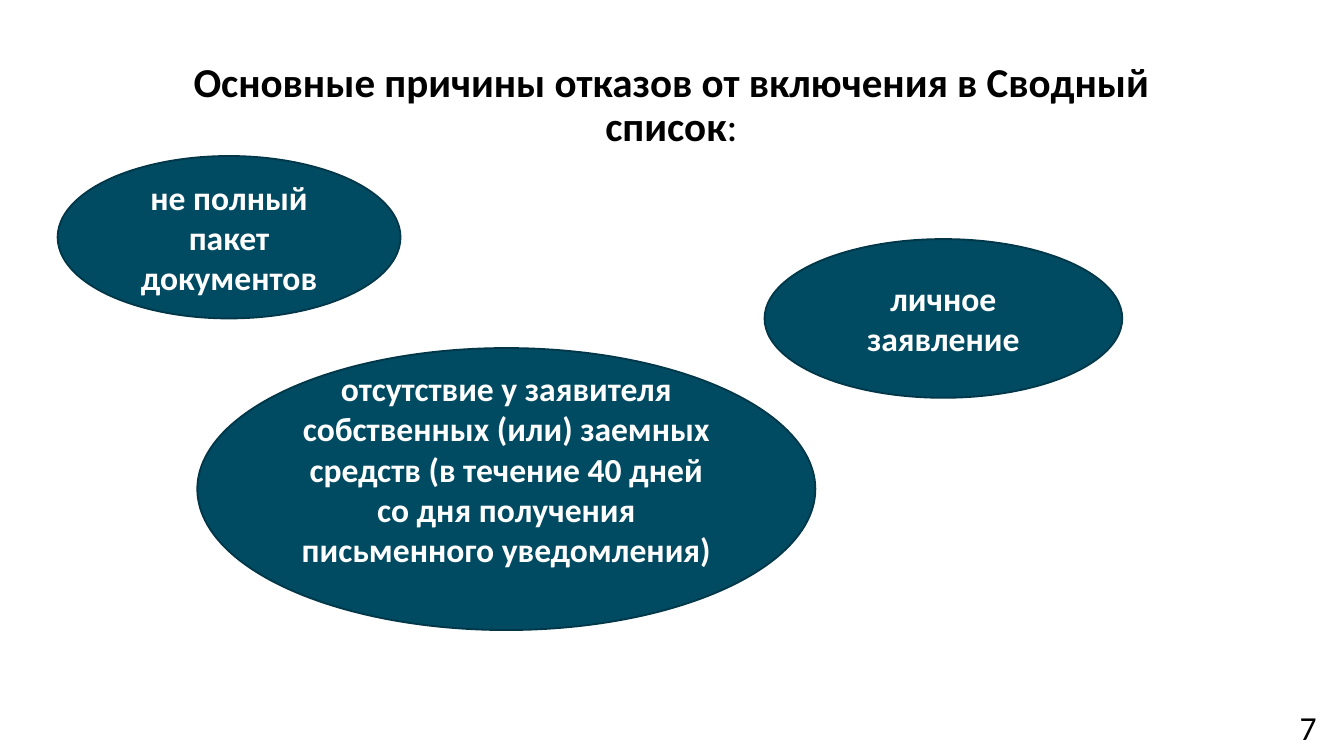
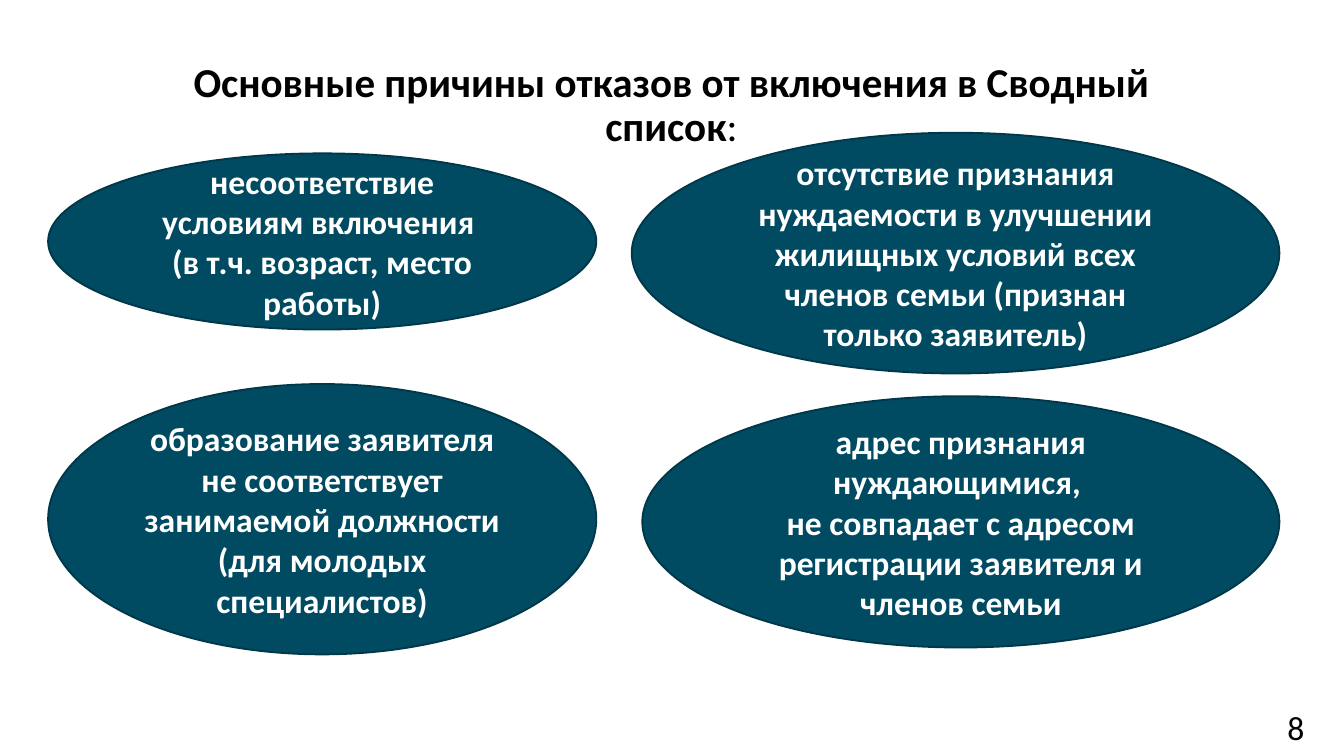
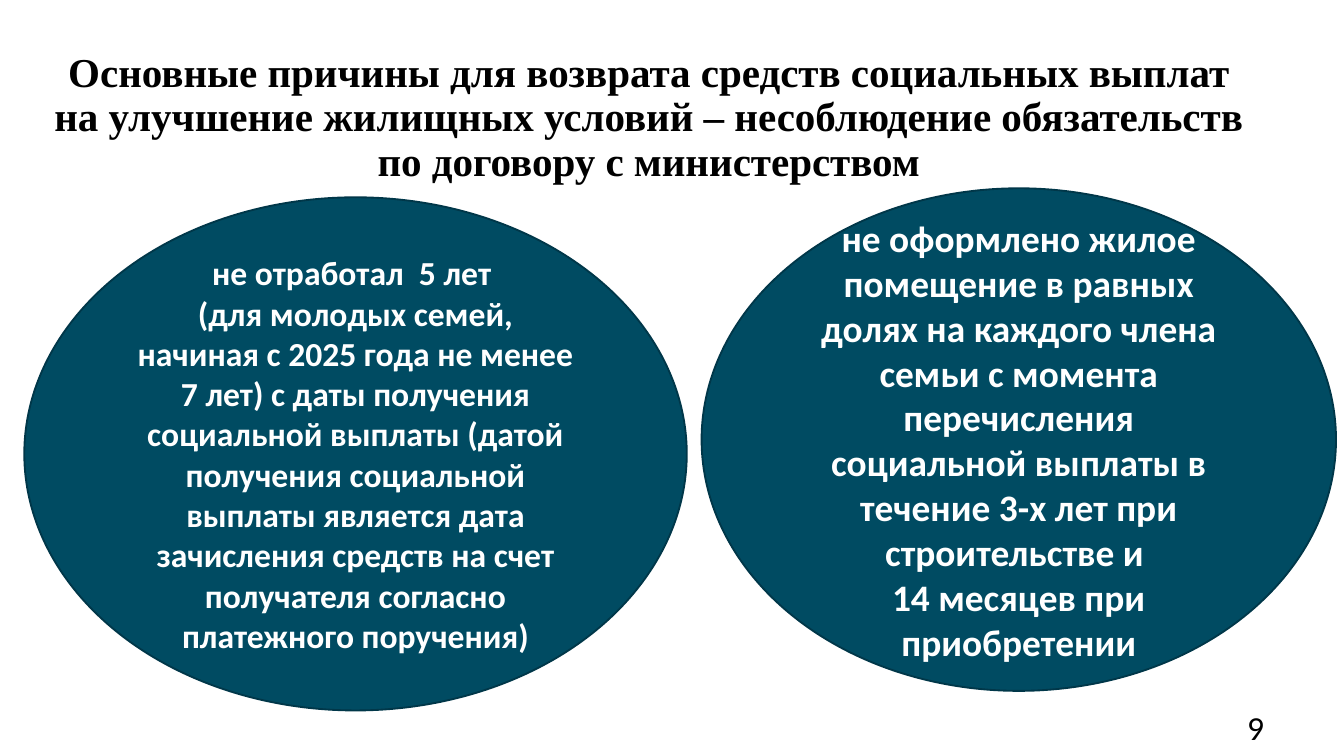
from pptx import Presentation
from pptx.dml.color import RGBColor
from pptx.enum import shapes, text
from pptx.util import Cm, Pt

COLOURS = {"oval": "004B62", "outline": "003749", "light": "FFFFFF", "dark": "000000"}
FONT = "Calibri"
TITLE_ONLY = 5
FIRST_NUMBER = 7
CENTER, RIGHT = text.PP_ALIGN.CENTER, text.PP_ALIGN.RIGHT

REFUSAL = dict(parts=["Основные причины отказов от включения в Сводный список", ":"],
               box=(2.57, 1.04, 20.24, 1.47))
REPAYMENT = dict(parts=["Основные причины для возврата средств социальных выплат на улучшение "
                        "жилищных условий – несоблюдение обязательств по договору с министерством"],
                 box=(0.64, 0.86, 23.24, 3.61), font="Times New Roman")

# Each reason: its box in cm, its paragraphs, then any special formatting
SLIDES = [
    dict(title=REFUSAL, number_left=24.31, number_align=RIGHT, reasons=[
        dict(box=(14.45, 4.52, 6.76, 3), lines=["личное заявление"]),
        dict(box=(3.73, 6.58, 11.68, 5.33), bottom=0.89, lines=[
            "отсутствие у заявителя собственных (или) заемных средств "
            "(в течение 40 дней со дня получения письменного уведомления)"]),
        dict(box=(1.09, 2.95, 6.48, 3.07), lines=["не полный пакет документов"]),
    ]),
    dict(title=REFUSAL, number_left=24.08, reasons=[
        dict(box=(0.91, 2.9, 10.36, 3.33), lines=[
            "несоответствие условиям включения ", "(в т.ч. возраст, место работы)"]),
        dict(box=(11.94, 2.51, 12.24, 4.55), lines=[
            "отсутствие признания нуждаемости в улучшении жилищных условий "
            "всех членов семьи (признан только заявитель)"]),
        dict(box=(0.91, 7.26, 10.36, 5.11), lines=[
            "образование заявителя не соответствует занимаемой должности ",
            "(для молодых специалистов)"]),
        dict(box=(12.14, 7.49, 12.04, 4.75), lines=[
            "адрес признания нуждающимися, ",
            "не совпадает с адресом регистрации заявителя и членов семьи"]),
    ]),
    dict(title=REPAYMENT, number_left=23.32, reasons=[
        dict(box=(0.46, 3.73, 12.52, 9.7), lines=[
            "не отработал  5 лет \v(для молодых семей, начиная с 2025 года не менее 7 лет) "
            "с даты получения социальной выплаты (датой получения социальной выплаты "
            "является дата зачисления средств на счет получателя согласно "
            "платежного поручения)"]),
        dict(box=(13.26, 3.56, 11.99, 9.5), size=20, lines=[
            "не оформлено жилое помещение в равных долях на каждого члена семьи с момента "
            "перечисления социальной выплаты в течение 3-х лет при строительстве и ",
            "14 месяцев при приобретении"]),
    ]),
]


def colour(name):
    return RGBColor.from_string(COLOURS[name])


def style(paragraph, size, shade, bold=False, font=FONT, align=CENTER):
    paragraph.alignment = align
    paragraph.font.name = font
    paragraph.font.size = Pt(size)
    paragraph.font.bold = bold
    paragraph.font.color.rgb = colour(shade)


def set_title(slide, parts, box, font=FONT):
    title = slide.shapes.title
    title.left, title.top, title.width, title.height = map(Cm, box)
    frame = title.text_frame
    frame.auto_size = text.MSO_AUTO_SIZE.NONE
    frame.vertical_anchor = text.MSO_ANCHOR.TOP
    heading = frame.paragraphs[0]
    heading.line_spacing = 0.9
    style(heading, 22, "dark", bold=True, font=font)
    for part in parts:
        run = heading.add_run()
        run.text = part
        if part == ":":
            run.font.bold = False


def add_reason(slide, box, lines, size=18, bottom=0.13):
    oval = slide.shapes.add_shape(shapes.MSO_SHAPE.OVAL, *map(Cm, box))
    oval.shadow.inherit = False
    oval.fill.solid()
    oval.fill.fore_color.rgb = colour("oval")
    oval.line.color.rgb = colour("outline")
    oval.line.width = Pt(1)
    frame = oval.text_frame
    frame.word_wrap = True
    frame.vertical_anchor = text.MSO_ANCHOR.MIDDLE
    frame.margin_bottom = Cm(bottom)
    frame.text = "\n".join(lines)
    for paragraph in frame.paragraphs:
        style(paragraph, size, "light", bold=True)


def add_number(slide, number, left, align):
    frame = slide.shapes.add_textbox(Cm(left), Cm(13.23), Cm(0.81), Cm(0.76)).text_frame
    frame.word_wrap = True
    frame.text = str(number)
    style(frame.paragraphs[0], 18, "dark", align=align)


def main():
    deck = Presentation()
    deck.slide_width, deck.slide_height = Cm(25.4), Cm(14.29)
    for number, content in enumerate(SLIDES, FIRST_NUMBER):
        slide = deck.slides.add_slide(deck.slide_layouts[TITLE_ONLY])
        set_title(slide, **content["title"])
        for reason in content["reasons"]:
            add_reason(slide, **reason)
        add_number(slide, number, content["number_left"], content.get("number_align", CENTER))
    deck.save("out.pptx")


if __name__ == "__main__":
    main()
